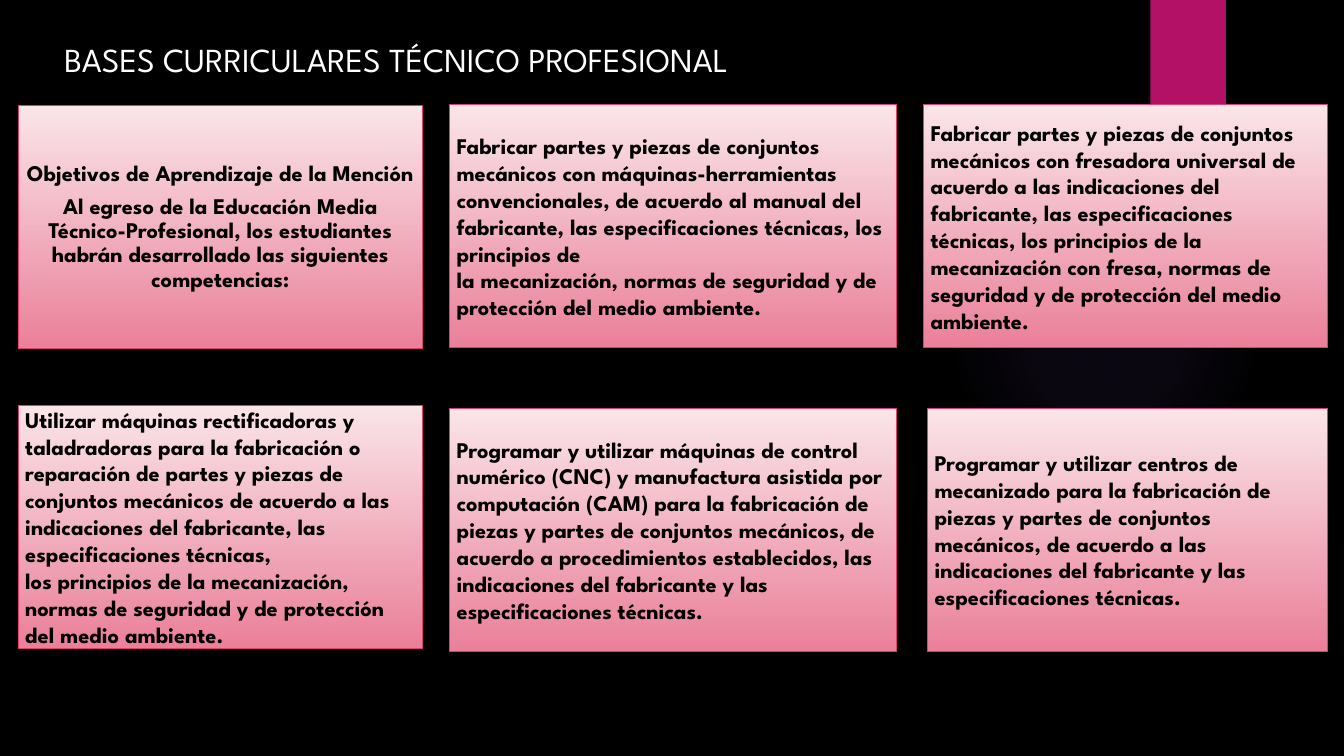
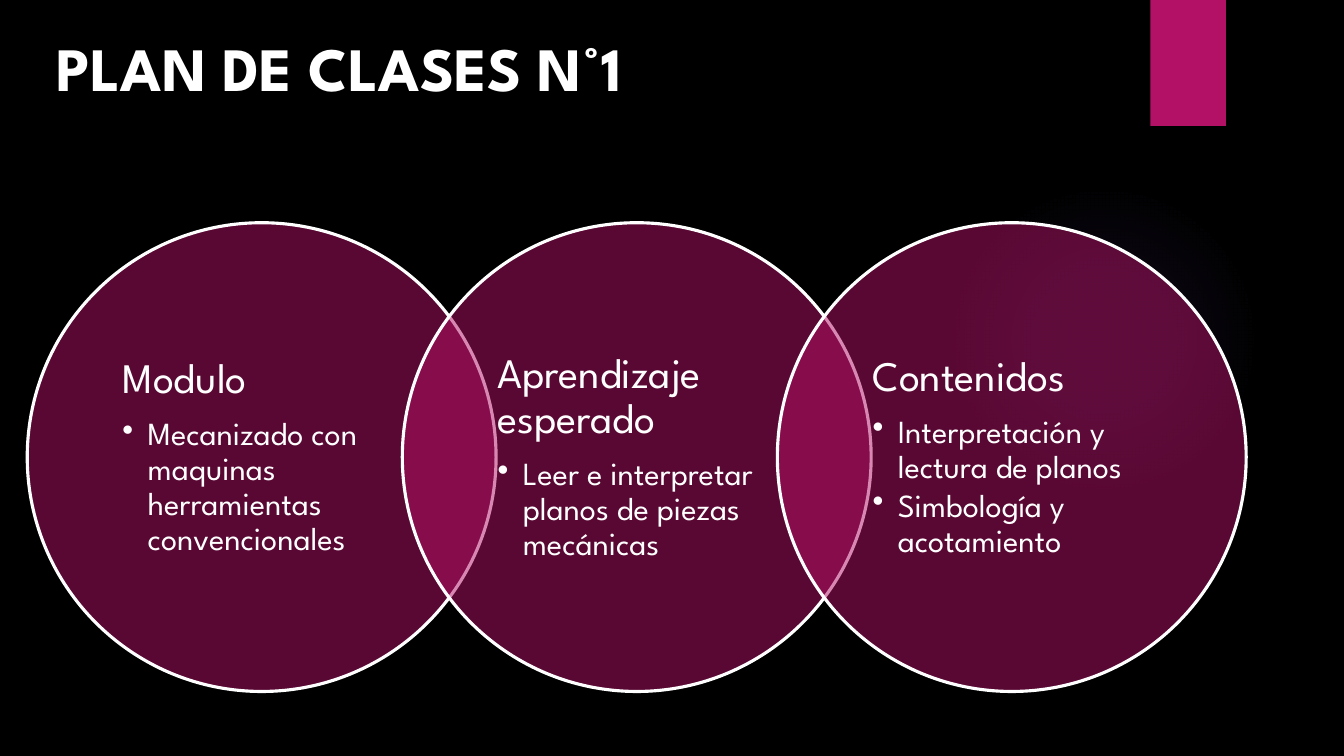
from dataclasses import dataclass

from lxml import etree
from pptx import Presentation
from pptx.dml.color import RGBColor
from pptx.enum.shapes import MSO_SHAPE
from pptx.enum.text import MSO_ANCHOR, PP_ALIGN
from pptx.oxml import parse_xml
from pptx.oxml.ns import nsdecls, qn
from pptx.util import Inches, Pt

RECT, OVAL = MSO_SHAPE.RECTANGLE, MSO_SHAPE.OVAL
TOP, MIDDLE, BOTTOM = MSO_ANCHOR.TOP, MSO_ANCHOR.MIDDLE, MSO_ANCHOR.BOTTOM
LEFT, CENTER = PP_ALIGN.LEFT, PP_ALIGN.CENTER


@dataclass(frozen=True)
class Theme:
    """Colours, font and type sizes of the deck."""
    font: str = "League Spartan"
    black: str = "000000"
    white: str = "FFFFFF"
    accent: str = "B31166"
    glow: str = "9B6BF2"
    light: str = "FAE5E9"
    deep: str = "EA8099"
    edge: str = "E33D6F"
    title: int = 24
    banner: int = 44
    card: int = 16
    head: int = 30
    item: int = 23


THEME = Theme()
SIDE, STEP = 4.65, 3.72
INNER = 3.28

CARDS = [
    ((0.18, 1.05, 4.01, 2.41), CENTER, [
        "Objetivos de Aprendizaje de la Mención",
        "Al egreso de la Educación Media Técnico-Profesional, los estudiantes "
        "habrán desarrollado las siguientes competencias:"]),
    ((4.46, 1.04, 4.43, 2.41), LEFT, [
        "Fabricar partes y piezas de conjuntos mecánicos con "
        "máquinas-herramientas convencionales, de acuerdo al manual del "
        "fabricante, las especificaciones técnicas, los principios de",
        "la mecanización, normas de seguridad y de protección del medio "
        "ambiente."]),
    ((9.16, 1.04, 4.01, 2.41), LEFT, [
        "Fabricar partes y piezas de conjuntos mecánicos con fresadora "
        "universal de acuerdo a las indicaciones del fabricante, las "
        "especificaciones técnicas, los principios de la mecanización con "
        "fresa, normas de seguridad y de protección del medio ambiente."]),
    ((0.18, 4.02, 4.01, 2.41), LEFT, [
        "Utilizar máquinas rectificadoras y taladradoras para la fabricación "
        "o reparación de partes y piezas de conjuntos mecánicos de acuerdo a "
        "las indicaciones del fabricante, las especificaciones técnicas,",
        "los principios de la mecanización, normas de seguridad y de "
        "protección del medio ambiente."]),
    ((4.46, 4.05, 4.43, 2.41), LEFT, [
        "Programar y utilizar máquinas de control numérico (CNC) y "
        "manufactura asistida por computación (CAM) para la fabricación de "
        "piezas y partes de conjuntos mecánicos, de acuerdo a procedimientos "
        "establecidos, las indicaciones del fabricante y las "
        "especificaciones técnicas."]),
    ((9.2, 4.05, 3.97, 2.41), LEFT, [
        "Programar y utilizar centros de mecanizado para la fabricación de "
        "piezas y partes de conjuntos mecánicos, de acuerdo a las "
        "indicaciones del fabricante y las especificaciones técnicas."]),
]

CIRCLES = [
    ("Modulo", ["Mecanizado con maquinas herramientas convencionales"]),
    ("Aprendizaje esperado",
     ["Leer e interpretar planos de piezas mecánicas"]),
    ("Contenidos",
     ["Interpretación y lectura de planos", "Simbología y acotamiento"]),
]


def rgb(code):
    """Turn a hex code into a colour."""
    return RGBColor.from_string(code)


def shape(slide, kind, box):
    """Add a preset shape with neither shadow nor line."""
    item = slide.shapes.add_shape(kind, *map(Inches, box))
    item.shadow.inherit = False
    item.line.fill.background()
    return item


def solid(item, color, alpha=100):
    """Fill a shape with one colour at a given opacity."""
    item.fill.solid()
    item.fill.fore_color.rgb = rgb(color)
    if alpha < 100:
        node = item.fill._xPr.find(qn("a:solidFill"))[0]
        etree.SubElement(node, qn("a:alpha"), val=str(alpha * 1000))


def border(item, color, width):
    """Outline a shape."""
    item.line.color.rgb = rgb(color)
    item.line.width = Pt(width)


def frame(item, anchor, side, edge):
    """Set wrapping, anchor and insets, and return the text frame."""
    text = item.text_frame
    text.word_wrap = True
    text.vertical_anchor = anchor
    text.margin_left = text.margin_right = Inches(side)
    text.margin_top = text.margin_bottom = Inches(edge)
    return text


def style(para, size, color, bold=False, align=LEFT, space=1.0, after=0):
    """Format a paragraph and its runs."""
    para.alignment = align
    para.line_spacing = space
    para.space_after = Pt(after)
    for run in para.runs:
        run.font.name = THEME.font
        run.font.size = Pt(size)
        run.font.bold = bold
        run.font.color.rgb = rgb(color)


def bullet(para):
    """Give a paragraph a hanging bullet."""
    props = para._p.get_or_add_pPr()
    props.set("marL", str(Inches(0.25)))
    props.set("indent", str(-Inches(0.25)))
    etree.SubElement(props, qn("a:buChar"), char="•")


def glow(slide):
    """Add the faint round light behind the content."""
    item = shape(slide, OVAL, (9.41, 1.83, 3.08, 3.08))
    item.fill.gradient()
    stops = "".join(
        f'<a:gs pos="{pos * 1000}"><a:srgbClr val="{THEME.glow}">'
        f'<a:alpha val="{alpha * 1000}"/></a:srgbClr></a:gs>'
        for pos, alpha in ((0, 7), (36, 6), (69, 0)))
    old = item.fill._xPr.find(qn("a:gradFill"))
    old.getparent().replace(old, parse_xml(
        f'<a:gradFill {nsdecls("a")}><a:gsLst>{stops}</a:gsLst>'
        '<a:path path="circle"><a:fillToRect l="50000" t="50000" '
        'r="50000" b="50000"/></a:path></a:gradFill>'))


def page(deck):
    """Add a blank slide with the shared glow and ribbon."""
    slide = deck.slides.add_slide(deck.slide_layouts[6])
    glow(slide)
    solid(shape(slide, RECT, (11.41, 0, 0.75, 1.25)), THEME.accent)
    return slide


def title(slide, words, box, size, bold=False, anchor=TOP,
          inset=(0.1, 0.05), space=1.0):
    """Add a slide title."""
    item = slide.shapes.add_textbox(*map(Inches, box))
    text = frame(item, anchor, *inset)
    text.text = words
    style(text.paragraphs[0], size, THEME.white, bold, space=space)


def card(slide, box, align, lines):
    """Add a pink gradient card with its text."""
    item = shape(slide, RECT, box)
    item.fill.gradient()
    item.fill.gradient_angle = 270
    for stop, color in zip(item.fill.gradient_stops,
                           (THEME.light, THEME.deep)):
        stop.color.rgb = rgb(color)
    border(item, THEME.edge, 0.75)
    text = frame(item, MIDDLE, 0.07, 0.07)
    text.text = "\n".join(lines)
    space, after = (0.9, 6) if align == CENTER else (1.0, 0)
    for para in text.paragraphs:
        style(para, THEME.card, THEME.black, True, align, space, after)


def circle(slide, left, top, head, items):
    """Add a see-through circle with a heading and bullets."""
    disc = shape(slide, OVAL, (left, top, SIDE, SIDE))
    solid(disc, THEME.accent, 50)
    border(disc, THEME.white, 2.25)
    gap = (SIDE - INNER) / 2
    box = (left + gap, top + gap, INNER, INNER)
    label = slide.shapes.add_textbox(*map(Inches, box))
    text = frame(label, MIDDLE, 0.26, 0.04)
    text.text = "\n".join([head, *items])
    first, *rest = text.paragraphs
    style(first, THEME.head, THEME.white, space=0.9, after=11)
    for para in rest:
        bullet(para)
        style(para, THEME.item, THEME.white, space=0.9, after=3)


def bases(deck):
    """Build the slide of learning goals."""
    slide = page(deck)
    title(slide, "BASES CURRICULARES TÉCNICO PROFESIONAL",
          (0.54, 0.34, 7.85, 0.5), THEME.title)
    for box, align, lines in CARDS:
        card(slide, box, align, lines)


def plan(deck):
    """Build the slide of the class plan."""
    slide = page(deck)
    for i, (head, items) in enumerate(CIRCLES):
        circle(slide, 0.27 + i * STEP, 2.21, head, items)
    title(slide, "PLAN DE CLASES N°1", (0.49, 0, 6.94, 1.11), THEME.banner,
          True, BOTTOM, (0.07, 0.07), 0.9)


def main():
    """Build and save the deck."""
    deck = Presentation()
    deck.slide_width, deck.slide_height = Inches(13.33), Inches(7.5)
    back = deck.slide_master.background.fill
    back.solid()
    back.fore_color.rgb = rgb(THEME.black)
    bases(deck)
    plan(deck)
    deck.save("out.pptx")


if __name__ == "__main__":
    main()
